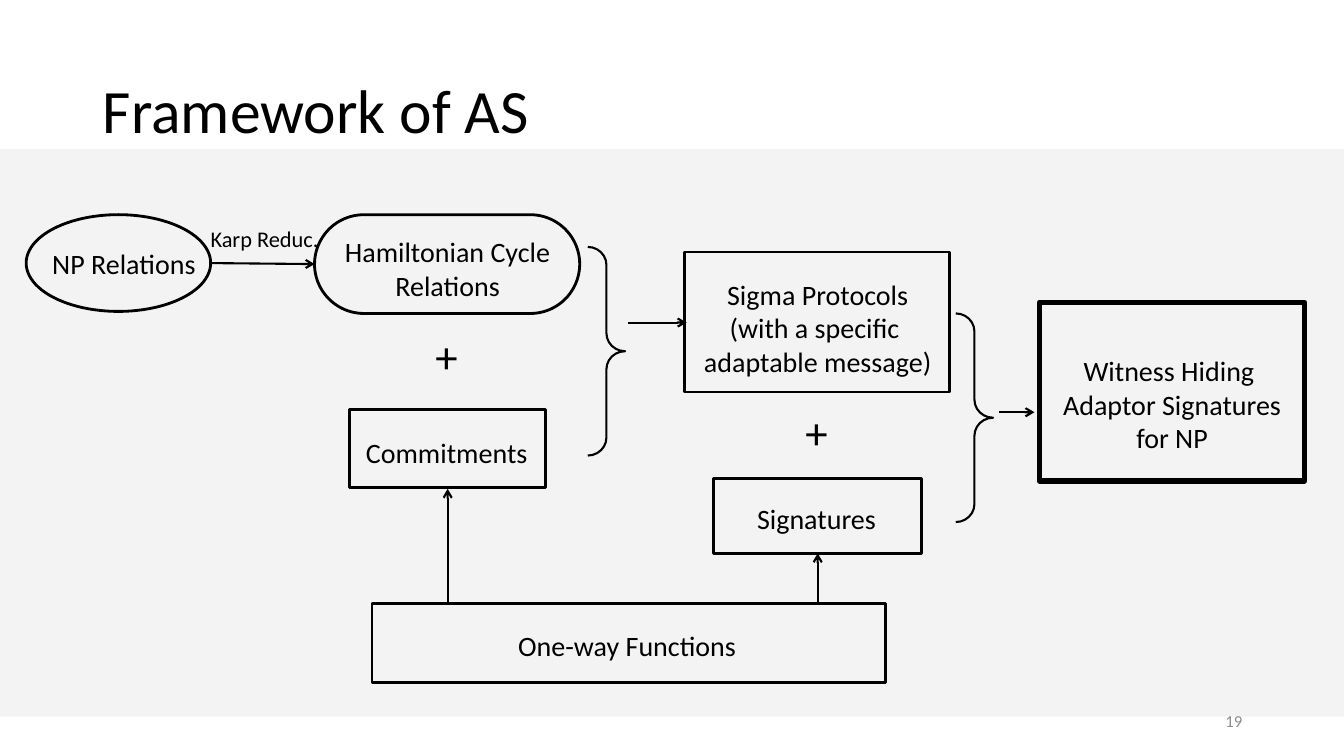
import pptx
import pptx.dml.color
import pptx.enum.shapes
import pptx.enum.text
import pptx.oxml
import pptx.oxml.ns
import pptx.util
import lxml.etree

Inches = pptx.util.Inches
Pt = pptx.util.Pt
Shape = pptx.enum.shapes.MSO_SHAPE
Align = pptx.enum.text.PP_ALIGN
Anchor = pptx.enum.text.MSO_ANCHOR


def color(value):
    return pptx.dml.color.RGBColor.from_string(value)


def add_element(parent, tag, **attributes):
    return lxml.etree.SubElement(parent, pptx.oxml.ns.qn(tag), **attributes)


class Diagram:
    font = "Calibri"
    ink = "000000"
    line_width = 1.5
    box_width = 2
    label_size = 20

    def __init__(self, page):
        self.page = page

    def style(self, para, size, ink=None, align=Align.LEFT):
        para.alignment = align
        para.font.name = self.font
        para.font.size = Pt(size)
        para.font.color.rgb = color(ink or self.ink)

    def title(self, text, place):
        title = self.page.shapes.title
        title.left, title.top, title.width, title.height = map(Inches, place)
        title.text_frame.text = text
        title.text_frame.vertical_anchor = Anchor.MIDDLE
        para = title.text_frame.paragraphs[0]
        para.line_spacing = 0.9
        self.style(para, 44)

    def band(self, place, fill, opacity):
        band = self.page.shapes.add_shape(Shape.RECTANGLE, *map(Inches, place))
        band.shadow.inherit = False
        band.line.fill.background()
        band.fill.solid()
        band.fill.fore_color.rgb = color(fill)
        shade = band.fill._xPr.find(".//" + pptx.oxml.ns.qn("a:srgbClr"))
        add_element(shade, "a:alpha", val=str(opacity * 1000))
        tree = band.element.getparent()
        tree.remove(band.element)
        tree.insert(2, band.element)

    def outline(self, kind, place, width, adjustments=(), shapes=None):
        shapes = shapes or self.page.shapes
        outline = shapes.add_shape(kind, *map(Inches, place))
        outline.shadow.inherit = False
        outline.fill.background()
        outline.line.color.rgb = color(self.ink)
        outline.line.width = Pt(width)
        for index, value in enumerate(adjustments):
            outline.adjustments[index] = value

    def text(self, lines, place, size, ink=None, align=Align.LEFT,
             anchor=Anchor.TOP, wrap=False, shapes=None):
        shapes = shapes or self.page.shapes
        box = shapes.add_textbox(*map(Inches, place))
        frame = box.text_frame
        frame.word_wrap = wrap
        frame.vertical_anchor = anchor
        frame.text = "\n".join(lines)
        for para in frame.paragraphs:
            self.style(para, size, ink, align)

    def node(self, kind, place, lines, label_place, width=box_width, adjustments=()):
        group = self.page.shapes.add_group_shape()
        self.outline(kind, place, width, adjustments, group.shapes)
        align = Align.CENTER if len(lines) > 1 else Align.LEFT
        self.text(lines, label_place, self.label_size, align=align, shapes=group.shapes)

    def arrow(self, start, end):
        arrow = self.page.shapes.add_connector(
            pptx.enum.shapes.MSO_CONNECTOR.STRAIGHT, *map(Inches, start + end))
        arrow.line.color.rgb = color(self.ink)
        arrow.line.width = Pt(self.line_width)
        add_element(arrow.line._get_or_add_ln(), "a:tailEnd", type="arrow")
        add_element(arrow.element.spPr, "a:effectLst")

    def brace(self, left, top):
        self.outline(Shape.RIGHT_BRACE, (left, top, 0.37, 2.07),
                     self.line_width, (0.483, 0.5))

    def plus(self, left, top):
        self.text(["+"], (left, top, 0.43, 0.64), 32)


def main():
    deck = pptx.Presentation()
    deck.slide_width = Inches(13.33)
    deck.slide_height = Inches(7.5)
    page = deck.slides.add_slide(deck.slide_layouts[5])
    diagram = Diagram(page)

    diagram.title("Framework of AS", (0.92, 0.4, 11.5, 1.45))
    diagram.band((0, 1.48, 13.33, 5.63), "D9D9D9", 30)

    diagram.node(Shape.RECTANGLE, (3.69, 5.99, 5.09, 0.78),
                 ["One-way Functions"], (5.04, 6.19, 2.38, 0.44))
    diagram.node(Shape.RECTANGLE, (7.08, 4.75, 2.06, 0.74),
                 ["Signatures"], (7.41, 4.93, 1.39, 0.44))
    diagram.node(Shape.RECTANGLE, (6.79, 2.5, 2.63, 1.39),
                 ["Sigma Protocols", "(with a specific ", "adaptable message)"],
                 (6.87, 2.7, 2.48, 1.11))
    diagram.node(Shape.RECTANGLE, (10.31, 3, 2.63, 1.77),
                 ["Witness Hiding ", "Adaptor Signatures", "for NP"],
                 (10.43, 3.46, 2.39, 1.11), width=4)
    diagram.node(Shape.RECTANGLE, (3.47, 4.06, 1.94, 0.78),
                 ["Commitments"], (3.53, 4.27, 1.82, 0.44))
    diagram.node(Shape.ROUNDED_RECTANGLE, (3.12, 2.13, 2.63, 0.98),
                 ["Hamiltonian Cycle", "Relations"],
                 (3.31, 2.28, 2.26, 0.77), adjustments=(0.5,))
    diagram.node(Shape.OVAL, (0.26, 2.13, 1.83, 0.96),
                 ["NP Relations"], (0.42, 2.4, 1.64, 0.44))

    diagram.text(["Karp Reduc."], (1.99, 2.18, 1.29, 0.37), 16)
    for start, end in (
        ((2.08, 2.61), (3.12, 2.62)),
        ((4.44, 5.99), (4.44, 4.85)),
        ((8.11, 5.99), (8.11, 5.49)),
        ((6.23, 3.2), (6.81, 3.2)),
        ((9.91, 4.09), (10.26, 4.09)),
    ):
        diagram.arrow(start, end)

    diagram.brace(5.83, 2.45)
    diagram.brace(9.48, 3.11)
    diagram.plus(4.22, 3.21)
    diagram.plus(7.89, 3.97)

    diagram.text(["19"], (9.42, 6.95, 3, 0.4), 12, "8C8C8C",
                 Align.RIGHT, Anchor.MIDDLE, wrap=True)
    deck.save("out.pptx")


if __name__ == "__main__":
    main()
